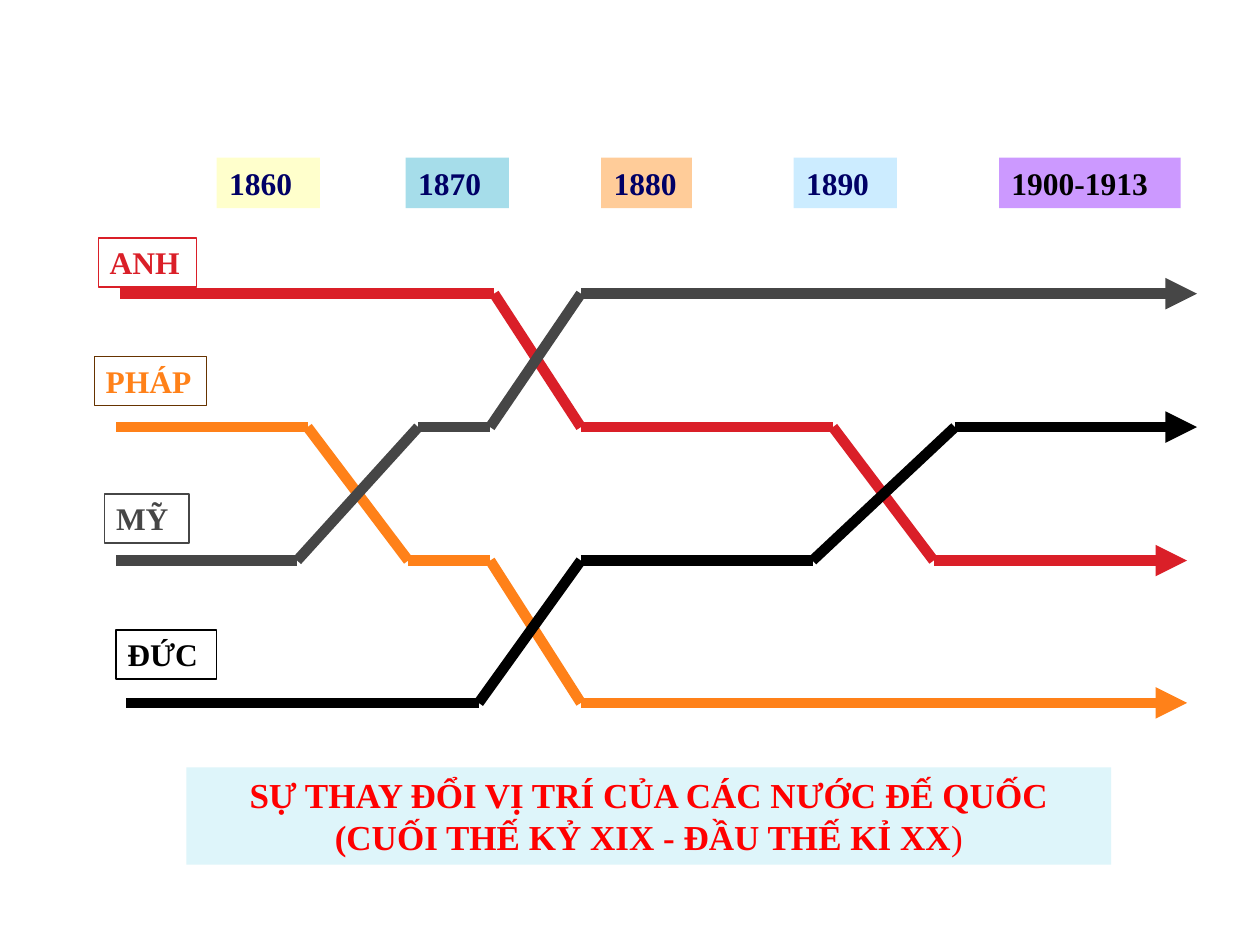
from lxml import etree
from pptx import Presentation
from pptx.dml.color import RGBColor
from pptx.enum.shapes import MSO_CONNECTOR, MSO_SHAPE
from pptx.enum.text import MSO_ANCHOR, PP_ALIGN
from pptx.oxml.ns import qn
from pptx.util import Cm, Pt

RECT = MSO_SHAPE.RECTANGLE
LINE = MSO_CONNECTOR.STRAIGHT
TOP = MSO_ANCHOR.TOP
LEFT, MID = PP_ALIGN.LEFT, PP_ALIGN.CENTER

BLACK = RGBColor(0x00, 0x00, 0x00)
NAVY = RGBColor(0x00, 0x00, 0x66)
RED = RGBColor(0xDA, 0x1F, 0x28)
ORANGE = RGBColor(0xFF, 0x81, 0x19)
GREY = RGBColor(0x46, 0x46, 0x46)
BROWN = RGBColor(0x66, 0x33, 0x00)
BRIGHT = RGBColor(0xFF, 0x00, 0x00)
CREAM = RGBColor(0xFF, 0xFF, 0xCC)
TEAL = RGBColor(0xA6, 0xDD, 0xEA)
PEACH = RGBColor(0xFF, 0xCC, 0x99)
SKY = RGBColor(0xCC, 0xEC, 0xFF)
LILAC = RGBColor(0xCC, 0x99, 0xFF)
ICE = RGBColor(0xDE, 0xF5, 0xFA)

YEARS = [
    ("1860", 0, 2.08, CREAM, NAVY),
    ("1870", 3.81, 2.08, TEAL, NAVY),
    ("1880", 7.75, 1.83, PEACH, NAVY),
    ("1890", 11.63, 2.08, SKY, NAVY),
    ("1900-1913", 15.77, 3.66, LILAC, BLACK),
]
ROWS = [1.12, 3.81, 6.5, 9.37]
NAMES = [
    ("ANH", 0.08, 0, 1.98, RED, RED),
    ("PHÁP", 0, 2.39, 2.26, BROWN, ORANGE),
    ("MỸ", 0.21, 5.16, 1.7, GREY, GREY),
    ("ĐỨC", 0.44, 7.9, 2.03, BLACK, BLACK),
]
TRACKS = [
    (ORANGE, [(0.44, 1), (4.3, 1), (6.33, 2), (7.98, 2), (9.81, 3), (22.03, 3)]),
    (RED, [(0.51, 0), (8.06, 0), (9.81, 1), (14.89, 1), (16.92, 2), (22.03, 2)]),
    (GREY, [(0.44, 2), (4.09, 2), (6.53, 1), (7.98, 1), (9.81, 0), (22.23, 0)]),
    (BLACK, [(0.64, 3), (7.75, 3), (9.81, 2), (14.48, 2), (17.35, 1), (22.23, 1)]),
]


def style(item, form):
    """Set each attribute named in a dict of format values."""
    for key, value in form.items():
        setattr(item, key, value)


def add_box(slide, box, fill=None, edge=None, inset=(0.25, 0.13), align=LEFT):
    """Add a plain rectangle and return its first paragraph."""
    shape = slide.shapes.add_shape(RECT, *map(Cm, box))
    shape.shadow.inherit = False
    if fill is None:
        shape.fill.background()
    else:
        shape.fill.solid()
        shape.fill.fore_color.rgb = fill
    if edge is None:
        shape.line.fill.background()
    else:
        shape.line.color.rgb = edge
        shape.line.width = Pt(0.75)
    side, end = map(Cm, inset)
    frame = shape.text_frame
    style(frame, {
        "word_wrap": True, "vertical_anchor": TOP,
        "margin_left": side, "margin_right": side,
        "margin_top": end, "margin_bottom": end,
    })
    para = frame.paragraphs[0]
    para.alignment = align
    return para


def add_run(para, text, color, size=18, bold=True):
    """Append one run of text to a paragraph."""
    run = para.add_run()
    run.text = text
    style(run.font, {"name": "Times New Roman", "size": Pt(size), "bold": bold})
    run.font.color.rgb = color


def add_line(slide, start, end, color, arrow):
    """Draw one thick segment, with an arrowhead if asked."""
    line = slide.shapes.add_connector(LINE, *map(Cm, start + end))
    line.line.color.rgb = color
    line.line.width = Pt(6)
    if arrow:
        ln = line.line._get_or_add_ln()
        etree.SubElement(ln, qn("a:tailEnd"), type="triangle")
    etree.SubElement(line._element.spPr, qn("a:effectLst"))


def add_years(slide, left, top, high):
    """Place the row of year tags."""
    for text, x, wide, fill, color in YEARS:
        para = add_box(slide, (left + x, top, wide, high), fill)
        add_run(para, text, color)


def add_tracks(slide, left, top):
    """Draw each country's path through the ranks, then its name."""
    for color, stops in TRACKS:
        points = [(left + x, top + ROWS[rank]) for x, rank in stops]
        for start, end in zip(points, points[1:]):
            add_line(slide, start, end, color, end == points[-1])
    for text, x, y, wide, edge, color in NAMES:
        box = (left + x, top + y, wide, 0.99)
        para = add_box(slide, box, edge=edge, inset=(0.23, 0.1))
        add_run(para, text, color)


def add_title(slide, box):
    """Place the two-line caption."""
    para = add_box(slide, box, ICE, align=MID)
    add_run(para, "SỰ THAY ĐỔI VỊ TRÍ CỦA CÁC NƯỚC ĐẾ QUỐC", BRIGHT, 20)
    para.add_line_break()
    add_run(para, "(CUỐI THẾ KỶ XIX - ĐẦU THẾ KỈ XX", BRIGHT, 20)
    add_run(para, ")", BRIGHT, 20, False)


def main():
    """Build the slide and save it."""
    deck = Presentation()
    style(deck, {"slide_width": Cm(25.4), "slide_height": Cm(19.05)})
    slide = deck.slides.add_slide(deck.slide_layouts[6])
    add_years(slide, 4.37, 3.18, 1.02)
    add_tracks(slide, 1.9, 4.8)
    add_title(slide, (3.76, 15.47, 18.64, 1.96))
    deck.save("out.pptx")


if __name__ == "__main__":
    main()
